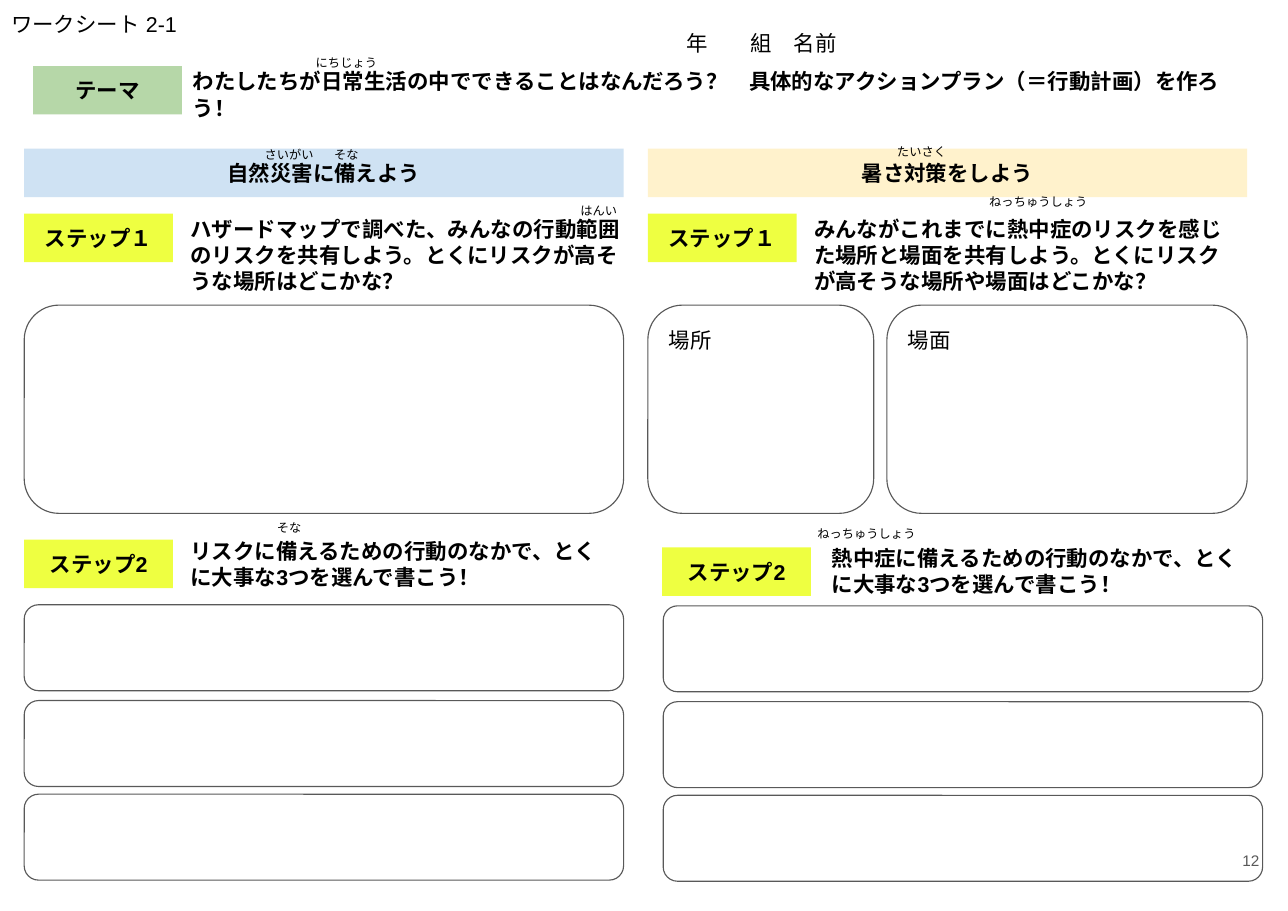
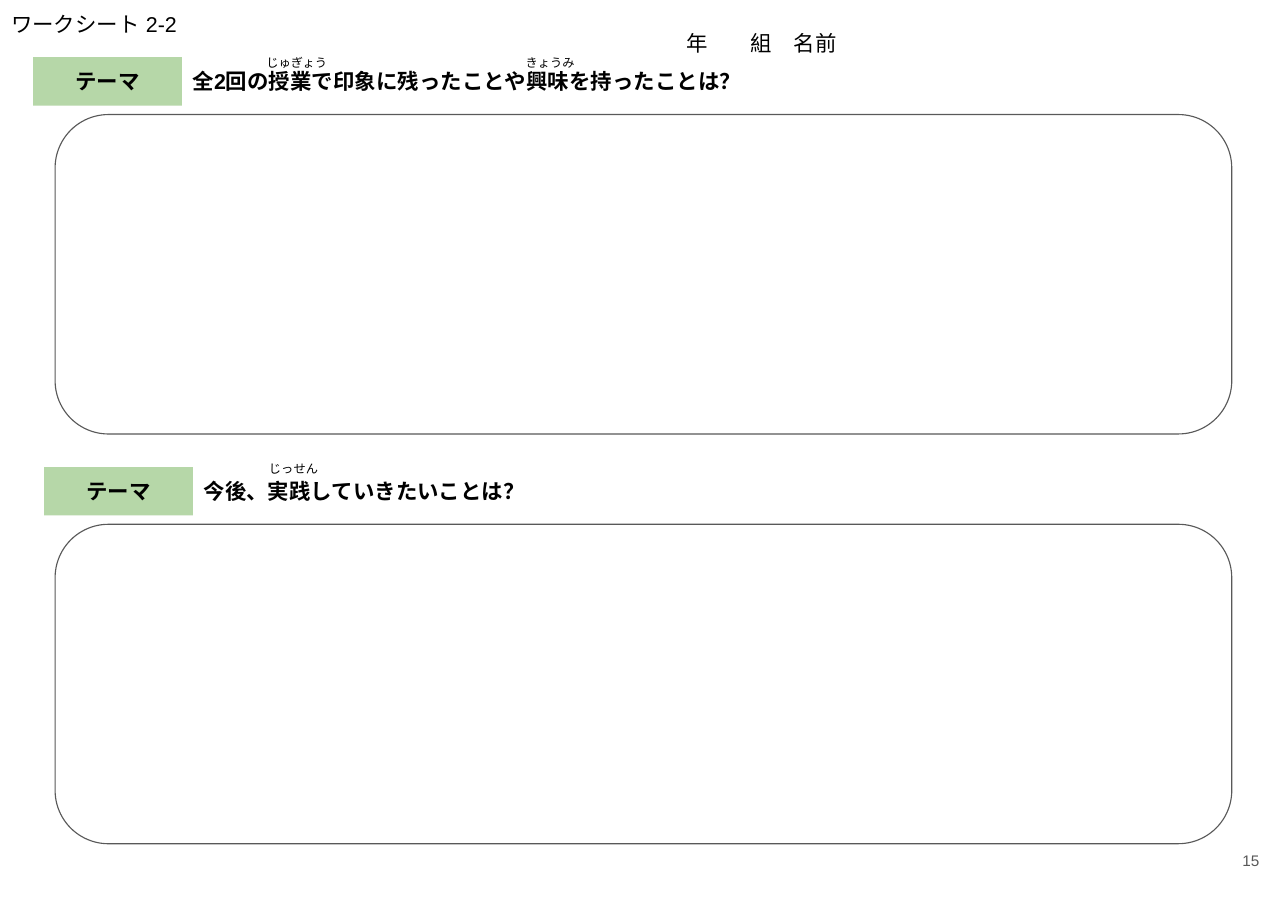
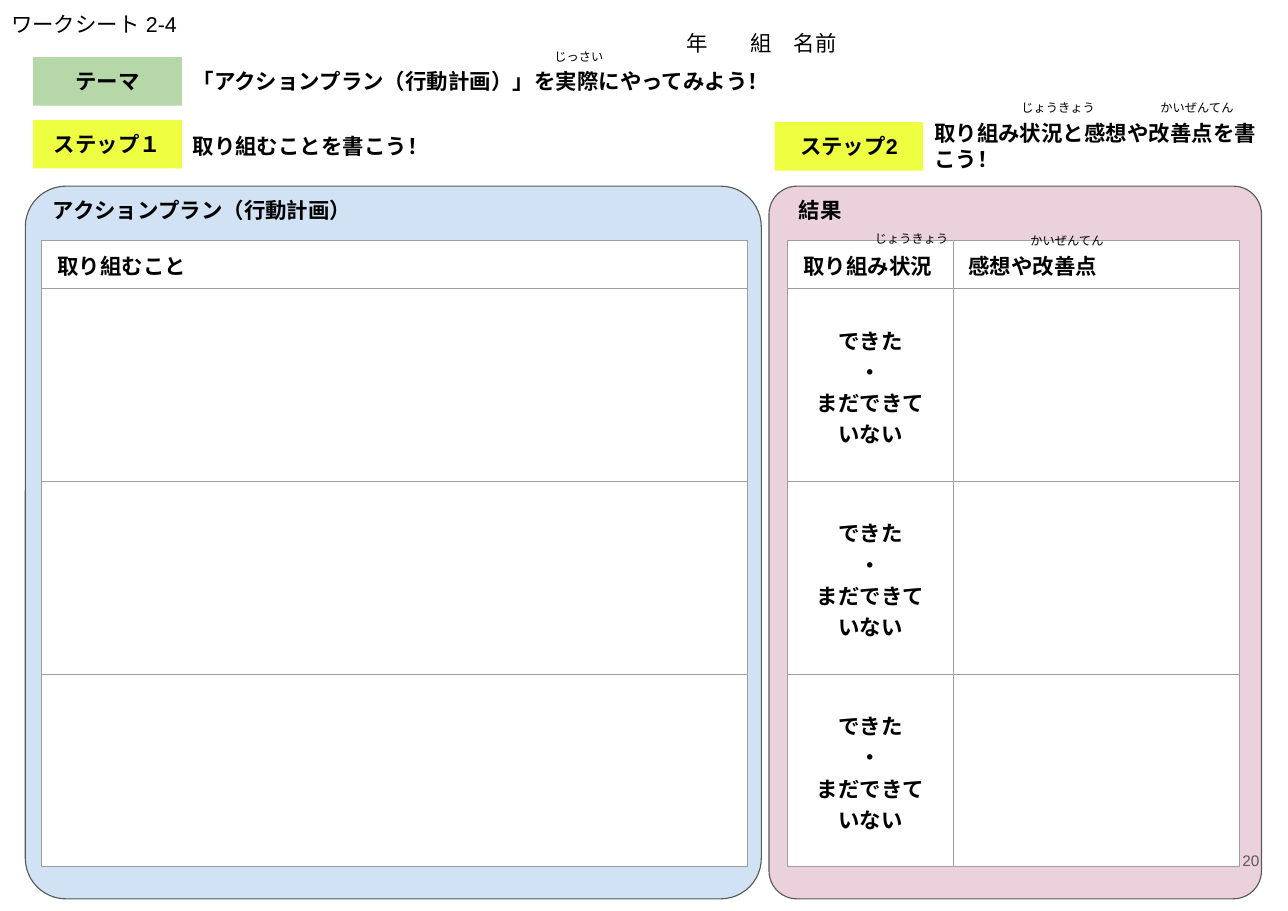
from lxml.etree import SubElement
from pptx import Presentation
from pptx.dml.color import RGBColor
from pptx.enum.shapes import MSO_SHAPE as Shape
from pptx.enum.text import MSO_ANCHOR as Anchor, MSO_AUTO_SIZE as AutoSize, PP_ALIGN as Align
from pptx.oxml.ns import qn
from pptx.util import Inches, Pt


def color(code):
    """Turn a hex string into a colour."""
    return RGBColor.from_string(code)


class Worksheet:
    """Hold the shared style and the page being filled."""

    FONT = "Arial"
    INK, OUTLINE, GRID, WHITE = "000000", "595959", "9E9E9E", "FFFFFF"
    GREEN, YELLOW, BLUE, CREAM = "B6D7A8", "EEFF41", "CFE2F3", "FFF2CC"
    PLAN, RESULT = "D0E2F3", "EAD1DC"
    LABEL_SIZE = (1.35, 0.44)

    def __init__(self):
        """Start an A4 landscape deck."""
        self.deck = Presentation()
        self.deck.slide_width, self.deck.slide_height = Inches(11.69), Inches(8.27)
        self.page = None

    def new_page(self, title, title_width):
        """Add a page with its title and the name line."""
        self.page = self.deck.slides.add_slide(self.deck.slide_layouts[5])
        box = self.page.shapes.title
        box.left, box.top = Inches(0), Inches(0)
        box.width, box.height = Inches(title_width), Inches(0.44)
        self.fill_frame(box.text_frame, [title])
        name = self.text(5.74, 0.17, 5.71, 0.44, "年　　組　名前", bold=False)
        name.text_frame.margin_left = Inches(0.49)

    def fill_frame(self, frame, lines, size=14, bold=False, ink=INK, align=Align.LEFT,
                   leading=17, anchor=Anchor.TOP):
        """Fill a text frame with one paragraph per line."""
        frame.word_wrap = True
        frame.auto_size = AutoSize.NONE
        frame.vertical_anchor = anchor
        frame.margin_left = frame.margin_right = Inches(0.1)
        frame.margin_top = frame.margin_bottom = Inches(0.1)
        self.fill_paragraphs(frame, lines, size, bold, ink, align, leading)

    def fill_paragraphs(self, frame, lines, size, bold, ink, align, leading):
        """Add styled paragraphs to a frame."""
        for index, line in enumerate(lines):
            para = frame.add_paragraph() if index else frame.paragraphs[0]
            para.alignment = align
            para.line_spacing = Pt(leading)
            span = para.add_run()
            span.text = line
            span.font.size, span.font.bold = Pt(size), bold
            span.font.color.rgb = color(ink)
            span.font.name = self.FONT
            SubElement(span.font._element, qn("a:ea"), typeface=self.FONT)

    def text(self, left, top, width, height, words, bold=True, **style):
        """Add a text box."""
        box = self.page.shapes.add_textbox(*map(Inches, (left, top, width, height)))
        self.fill_frame(box.text_frame, [words], bold=bold, **style)
        return box

    def reading(self, left, top, words):
        """Add a small reading aid above a word."""
        self.text(left, top, 1.17, 0.34, words, bold=False, size=8, leading=7,
                  align=Align.CENTER)

    def number(self, value):
        """Add the page number."""
        self.text(10.83, 7.5, 0.7, 0.63, value, bold=False, size=10, leading=12,
                  ink=self.OUTLINE, align=Align.RIGHT, anchor=Anchor.MIDDLE)

    def shape(self, kind, left, top, width, height):
        """Add a preset shape without shadow."""
        box = self.page.shapes.add_shape(kind, *map(Inches, (left, top, width, height)))
        box.shadow.inherit = False
        return box

    def band(self, left, top, width, height, words, fill):
        """Add a filled band with a centred bold label."""
        box = self.shape(Shape.RECTANGLE, left, top, width, height)
        box.fill.solid()
        box.fill.fore_color.rgb = color(fill)
        box.line.fill.background()
        self.fill_frame(box.text_frame, [words], bold=True, align=Align.CENTER)

    def theme(self, left, top):
        """Add a theme label."""
        self.band(left, top, *self.LABEL_SIZE, "テーマ", self.GREEN)

    def step(self, left, top, digit):
        """Add a step label."""
        self.band(left, top, *self.LABEL_SIZE, f"ステップ{digit}", self.YELLOW)

    def frame(self, left, top, width, height, words=None, fill=None, corner=0.167):
        """Add a rounded frame for answers."""
        box = self.shape(Shape.ROUNDED_RECTANGLE, left, top, width, height)
        box.adjustments[0] = corner
        if fill:
            box.fill.solid()
            box.fill.fore_color.rgb = color(fill)
        else:
            box.fill.background()
        box.line.color.rgb = color(self.OUTLINE)
        box.line.width = Pt(0.75)
        if words:
            self.fill_frame(box.text_frame, [words])

    def table(self, left, top, widths, heights, rows):
        """Add a white table with thin grey borders."""
        holder = self.page.shapes.add_table(
            len(heights), len(widths), Inches(left), Inches(top),
            Inches(sum(widths)), Inches(sum(heights)))
        grid = holder.table
        grid.first_row = grid.horz_banding = False
        for column, width in zip(grid.columns, widths):
            column.width = Inches(width)
        for row, height, entries in zip(grid.rows, heights, rows):
            row.height = Inches(height)
            for cell, lines in zip(row.cells, entries):
                self.cell(cell, lines)

    def cell(self, cell, lines):
        """Style one table cell and fill it."""
        cell.margin_left = cell.margin_right = Inches(0.14)
        cell.margin_top = cell.margin_bottom = Inches(0.07)
        choice = len(lines) > 1
        cell.vertical_anchor = Anchor.MIDDLE if choice else Anchor.TOP
        self.fill_paragraphs(cell.text_frame, lines, 14, True, self.INK,
                             Align.CENTER if choice else Align.LEFT, 20.4)
        props = cell._tc.get_or_add_tcPr()
        for side in ("a:lnL", "a:lnR", "a:lnT", "a:lnB"):
            edge = SubElement(props, qn(side), w=str(Pt(0.75)))
            SubElement(SubElement(edge, qn("a:solidFill")), qn("a:srgbClr"), val=self.GRID)
        cell.fill.solid()
        cell.fill.fore_color.rgb = color(self.WHITE)


def build_planning(sheet):
    """Build the action planning page."""
    sheet.new_page("ワークシート 2-1", 1.96)
    sheet.theme(0.3, 0.6)
    sheet.text(1.65, 0.52, 9.53, 0.67,
               "わたしたちが日常生活の中でできることはなんだろう？　"
               "具体的なアクションプラン（＝行動計画）を作ろう！")
    sheet.band(0.22, 1.35, 5.44, 0.44, "自然災害に備えよう", sheet.BLUE)
    sheet.band(5.88, 1.35, 5.44, 0.44, "暑さ対策をしよう", sheet.CREAM)
    for left in (0.22, 5.88):
        sheet.step(left, 1.94, "１")
    sheet.text(1.63, 1.86, 4.11, 0.91,
               "ハザードマップで調べた、みんなの行動範囲のリスクを共有しよう。"
               "とくにリスクが高そうな場所はどこかな？")
    sheet.text(7.29, 1.86, 4.04, 0.91,
               "みんながこれまでに熱中症のリスクを感じた場所と場面を共有しよう。"
               "とくにリスクが高そうな場所や場面はどこかな？")
    for left, width, words in ((0.22, 5.44, None), (5.88, 2.05, "場所"), (8.05, 3.27, "場面")):
        sheet.frame(left, 2.77, width, 1.89, words)
    for label_left, label_top, text_left, topic in (
            (0.22, 4.9, 1.63, "リスク"), (6.01, 4.97, 7.45, "熱中症")):
        sheet.step(label_left, label_top, "2")
        sheet.text(text_left, label_top - 0.12, 4.04, 0.67,
                   f"{topic}に備えるための行動のなかで、とくに大事な3つを選んで書こう！")
    for left, first_top in ((0.22, 5.49), (6.02, 5.5)):
        for offset in (0, 0.87, 1.72):
            sheet.frame(left, first_top + offset, 5.44, 0.78)
    for left, top, words in (
            (2.56, 0.44, "にちじょう"), (2.04, 1.27, "さいがい"), (2.56, 1.27, "そな"),
            (4.85, 1.78, "はんい"), (2.04, 4.66, "そな"), (7.78, 1.25, "たいさく"),
            (8.84, 1.7, "ねっちゅうしょう"), (7.28, 4.71, "ねっちゅうしょう")):
        sheet.reading(left, top, words)
    sheet.number("12")


def build_reflection(sheet):
    """Build the reflection page."""
    sheet.new_page("ワークシート 2-2", 4.74)
    for left, top, question in (
            (0.3, 0.52, "全2回の授業で印象に残ったことや興味を持ったことは？"),
            (0.4, 4.24, "今後、実践していきたいことは？")):
        sheet.theme(left, top)
        sheet.text(left + 1.35, top, 9.53, 0.44, question)
        sheet.frame(0.5, top + 0.52, 10.68, 2.9)
    for left, top, words in (
            (2.11, 0.44, "じゅぎょう"), (4.41, 0.44, "きょうみ"), (2.08, 4.12, "じっせん")):
        sheet.reading(left, top, words)
    sheet.number("15")


def build_action(sheet):
    """Build the action record page."""
    sheet.new_page("ワークシート 2-4", 9.53)
    sheet.frame(6.98, 1.69, 4.47, 6.47, fill=sheet.RESULT, corner=0.057)
    sheet.frame(0.23, 1.69, 6.68, 6.47, fill=sheet.PLAN, corner=0.057)
    sheet.theme(0.3, 0.52)
    sheet.text(1.65, 0.52, 9.53, 0.44, "「アクションプラン（行動計画）」を実際にやってみよう！")
    sheet.step(0.3, 1.09, "１")
    sheet.text(1.65, 1.11, 5.26, 0.44, "取り組むことを書こう！")
    sheet.step(7.03, 1.11, "2")
    sheet.text(8.38, 0.99, 3.31, 0.67, "取り組み状況と感想や改善点を書こう！")
    sheet.text(0.38, 1.69, 4.76, 0.44, "アクションプラン（行動計画）")
    sheet.text(7.15, 1.69, 4.1, 0.44, "結果")
    heights = [0.44] + [1.75] * 3
    choices = ["できた", "・", "まだできて", "いない"]
    sheet.table(0.38, 2.18, [6.4], heights, [[["取り組むこと"]]] + [[[]]] * 3)
    sheet.table(7.15, 2.18, [1.5, 2.6], heights,
                [[["取り組み状況"], ["感想や改善点"]]] + [[choices, []]] * 3)
    for left, top, words in (
            (4.67, 0.38, "じっさい"), (9.02, 0.85, "じょうきょう"), (10.28, 0.85, "かいぜんてん"),
            (7.69, 2.04, "じょうきょう"), (9.1, 2.05, "かいぜんてん")):
        sheet.reading(left, top, words)
    sheet.number("20")


def main():
    """Build and save the worksheets."""
    sheet = Worksheet()
    for build in (build_planning, build_reflection, build_action):
        build(sheet)
    sheet.deck.save("out.pptx")


if __name__ == "__main__":
    main()
